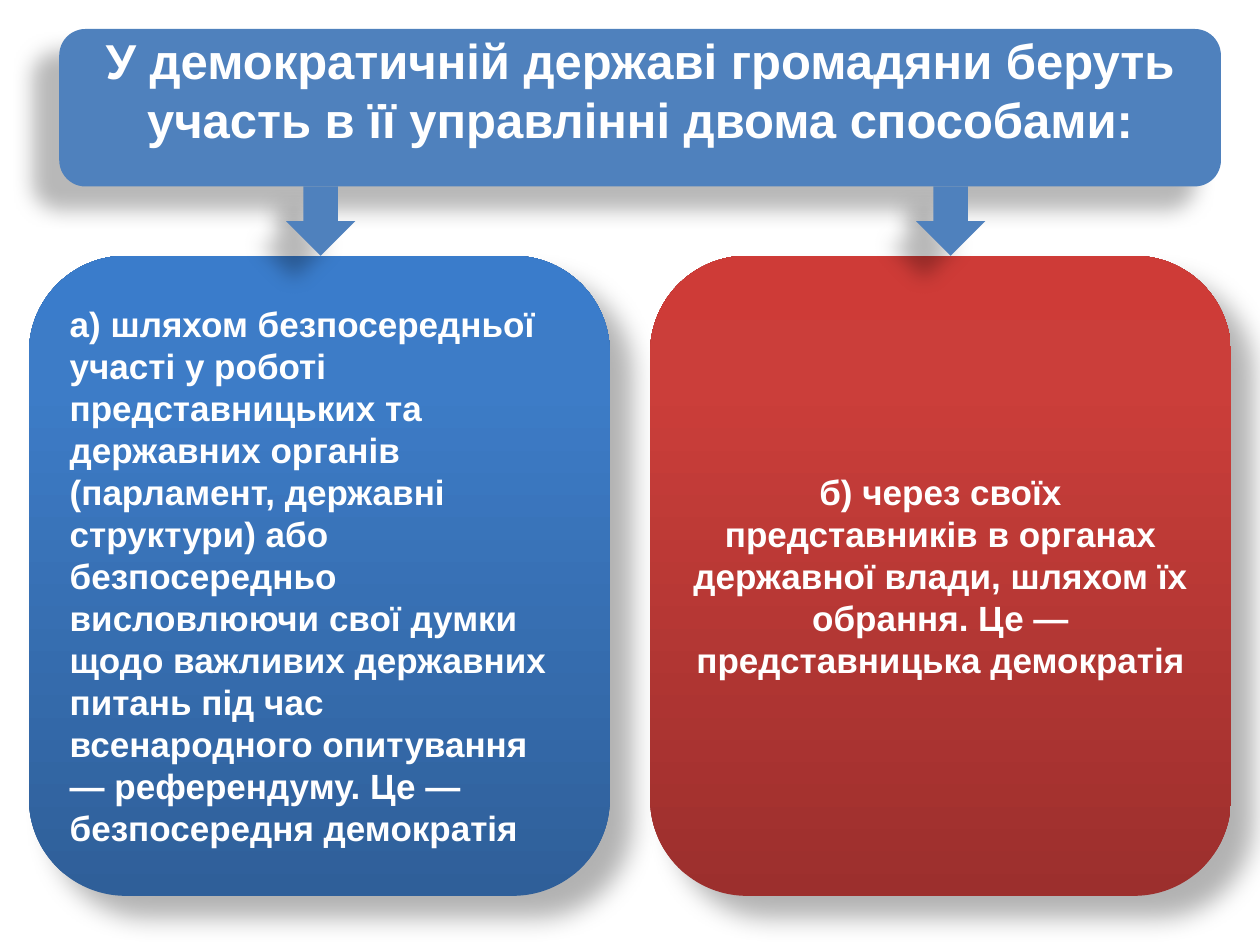
from lxml.etree import SubElement
from pptx import Presentation
from pptx.dml.color import RGBColor
from pptx.enum.shapes import MSO_SHAPE
from pptx.enum.text import MSO_ANCHOR, PP_ALIGN
from pptx.oxml.ns import qn
from pptx.util import Inches, Pt

HEADING = "У демократичній державі громадяни беруть участь в її управлінні двома способами:"
WAYS = [
    {
        "paragraphs": [
            "а) шляхом безпосередньої участі у роботі представницьких та державних органів "
            "(парламент, державні структури) або безпосередньо висловлюючи свої думки щодо "
            "важливих державних питань під час всенародного опитування — референдуму. Це —",
            "безпосередня демократія",
        ],
        "align": PP_ALIGN.LEFT,
        "gradient": [(0, "2F5F99"), (80, "3D7CC7"), (100, "3A7CCB")],
    },
    {
        "paragraphs": [
            "б) через своїх представників в органах державної влади, шляхом їх обрання. "
            "Це — представницька демократія",
        ],
        "align": PP_ALIGN.CENTER,
        "gradient": [(0, "9C2F2D"), (80, "CB3E3A"), (100, "CE3B37")],
    },
]
BLUE = "4F81BD"
WHITE = "FFFFFF"
LEFT_SHADOW = {"alpha": 28, "blur": 11.8, "distance": 19.7, "angle": 141}
RIGHT_SHADOW = {"alpha": 30, "blur": 15, "distance": 18, "angle": 45}

SLIDE_W, SLIDE_H = 10, 7.5
HEADING_BOX = (0.47, 0.23, 9.22, 1.25)
ARROW = 0.55
ARROW_TOP = HEADING_BOX[1] + HEADING_BOX[3]
CARD_TOP = ARROW_TOP + ARROW
CARD_W, CARD_H = 4.61, 5.08
CARD_LEFT = 0.23
CARD_STEP = SLIDE_W - 2 * CARD_LEFT - CARD_W
ARROW_LEFT, ARROW_STEP = 2.27, 5


def color(value):
    return RGBColor.from_string(value)


def add_block(slide, preset, box, shadow, fill=None, gradient=None):
    block = slide.shapes.add_shape(preset, *map(Inches, box))
    block.line.fill.background()
    if gradient:
        block.fill.gradient()
        block.fill.gradient_angle = 90
        stops = block._element.spPr.find(".//" + qn("a:gsLst"))
        for stop in list(stops):
            stops.remove(stop)
        for position, value in gradient:
            stop = SubElement(stops, qn("a:gs"), pos=str(position * 1000))
            SubElement(stop, qn("a:srgbClr"), val=value)
    else:
        block.fill.solid()
        block.fill.fore_color.rgb = color(fill)
    block.shadow.inherit = False
    effects = block._element.spPr.find(qn("a:effectLst"))
    outer = SubElement(
        effects, qn("a:outerShdw"),
        blurRad=str(Pt(shadow["blur"])), dist=str(Pt(shadow["distance"])),
        dir=str(shadow["angle"] * 60000), algn="ctr", rotWithShape="0",
    )
    tint = SubElement(outer, qn("a:srgbClr"), val="000000")
    SubElement(tint, qn("a:alpha"), val=str(shadow["alpha"] * 1000))
    return block


def write(block, paragraphs, size=20, align=PP_ALIGN.CENTER, bottom=0.05):
    frame = block.text_frame
    frame.word_wrap = True
    frame.vertical_anchor = MSO_ANCHOR.MIDDLE
    frame.margin_bottom = Inches(bottom)
    for index, text in enumerate(paragraphs):
        paragraph = frame.add_paragraph() if index else frame.paragraphs[0]
        paragraph.alignment = align
        run = paragraph.add_run()
        run.text = text
        run.font.name = "Arial"
        run.font.size = Pt(size)
        run.font.bold = True
        run.font.color.rgb = color(WHITE)


def main():
    deck = Presentation()
    deck.slide_width, deck.slide_height = Inches(SLIDE_W), Inches(SLIDE_H)
    slide = deck.slides.add_slide(deck.slide_layouts[6])

    heading = add_block(slide, MSO_SHAPE.ROUNDED_RECTANGLE, HEADING_BOX, LEFT_SHADOW, fill=BLUE)
    write(heading, [HEADING], size=28, bottom=0.34)

    for index, way in enumerate(WAYS):
        box = (CARD_LEFT + index * CARD_STEP, CARD_TOP, CARD_W, CARD_H)
        card = add_block(slide, MSO_SHAPE.ROUNDED_RECTANGLE, box, RIGHT_SHADOW,
                         gradient=way["gradient"])
        write(card, way["paragraphs"], align=way["align"])

    for index in range(len(WAYS)):
        box = (ARROW_LEFT + index * ARROW_STEP, ARROW_TOP, ARROW, ARROW)
        add_block(slide, MSO_SHAPE.DOWN_ARROW, box, LEFT_SHADOW, fill=BLUE)

    deck.save("out.pptx")


if __name__ == "__main__":
    main()
